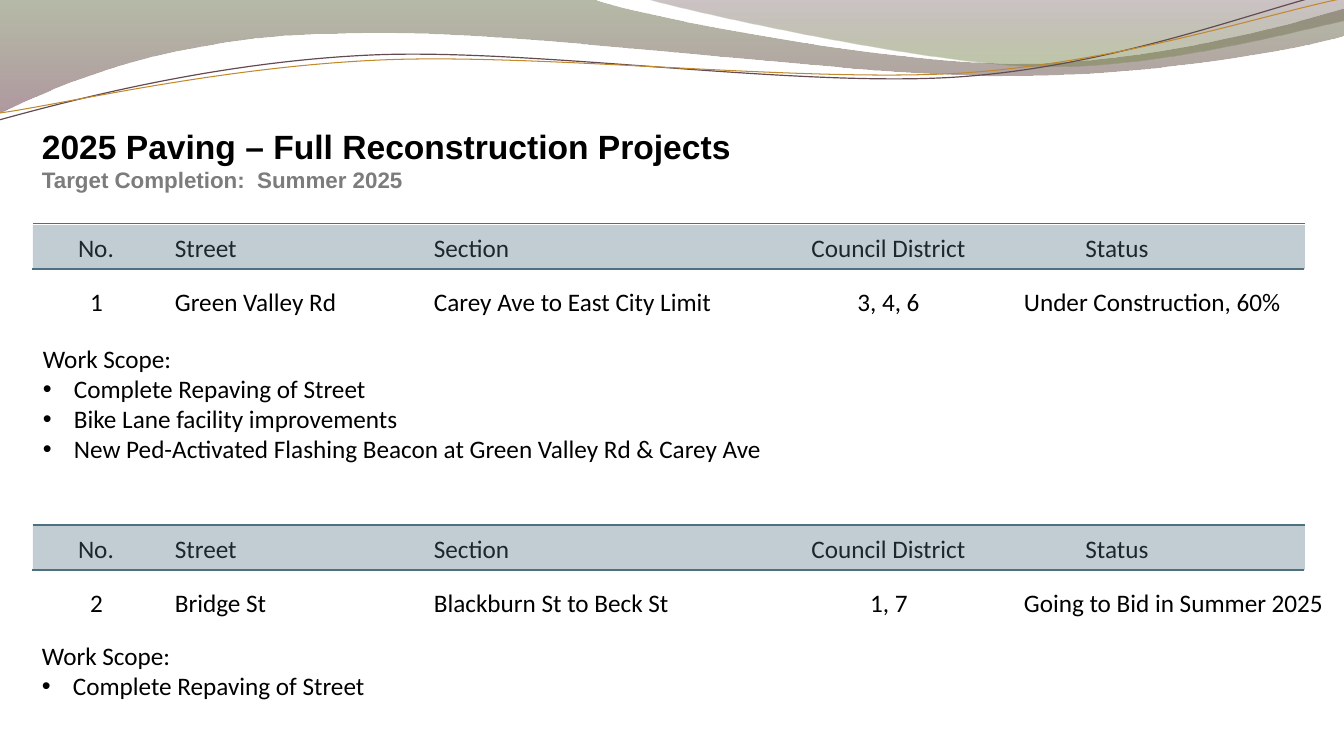
import pptx
import pptx.util
import pptx.dml.color
import pptx.enum.shapes
import pptx.enum.text
import pptx.oxml.ns
import lxml.etree

RGB = pptx.dml.color.RGBColor
ALIGN = pptx.enum.text.PP_ALIGN
SCALE = 914400 / 100.8

BLACK = RGB(0x00, 0x00, 0x00)
GRAY = RGB(0x7C, 0x7C, 0x7C)
RULE = RGB(0x4D, 0x70, 0x7F)
BAND = RGB(0x50, 0x72, 0x81)
MOSS = RGB(0x5E, 0x66, 0x3D)
MAUVE = RGB(0x6E, 0x44, 0x50)
WINE = RGB(0x56, 0x3A, 0x41)
OLIVE = RGB(0x73, 0x80, 0x45)
PLUM = RGB(0x64, 0x4A, 0x51)
GOLD = RGB(0xC1, 0x88, 0x2C)

# Paths: two numbers make a straight step, six make a curve
WAVES = [
    ([(0, -1), (592, -1), (639, 17, 892, 64, 1019, 64),
      (1147, 64, 1288, 26, 1344, 9), (1346, 36),
      (1321, 44, 1169, 77, 1002, 76), (836, 76, 513, 28, 346, 34),
      (173, 35, 61, 84, -1, 114)],
     [(0, MOSS, 45), (1, MAUVE, 55)]),
    ([(644, -1), (684, 11, 916, 62, 1033, 66),
      (1150, 70, 1292, 32, 1344, 21), (1344, 0)],
     [(0, WINE, 30), (0.8, OLIVE, 45)]),
]
CURVES = [
    ([(-1, 120), (65, 102, 213, 62, 372, 55), (531, 48, 796, 88, 958, 77),
      (1119, 66, 1262, 8, 1342, -10)], PLUM, 0.85),
    ([(0, 113), (64, 104, 220, 67, 381, 60), (541, 53, 802, 83, 963, 73),
      (1124, 62, 1265, 14, 1345, -2)], GOLD, 0.75),
]

# Each cell: text, left, width, alignment
HEADS = [("No.", 68, 56, ALIGN.CENTER), ("Street", 165, 83, ALIGN.LEFT),
         ("Section", 424, 96, ALIGN.LEFT),
         ("Council District", 801, 175, ALIGN.CENTER),
         ("Status", 1075, 84, ALIGN.CENTER)]
PARTS = [
    (224, [("1", 80, 33, ALIGN.CENTER),
           ("Green Valley Rd", 165, 183, ALIGN.LEFT),
           ("Carey Ave to East City Limit", 424, 298, ALIGN.LEFT),
           ("3, 4, 6", 847, 83, ALIGN.CENTER),
           ("Under Construction, 60%", 1014, 278, ALIGN.LEFT)],
     (33, 338, 743, 163),
     ["Complete Repaving of Street", "Bike Lane facility improvements",
      "New Ped-Activated Flashing Beacon at Green Valley Rd & Carey Ave"]),
    (525, [("2", 80, 33, ALIGN.CENTER),
           ("Bridge St", 165, 112, ALIGN.LEFT),
           ("Blackburn St to Beck St", 424, 255, ALIGN.LEFT),
           ("1, 7", 860, 58, ALIGN.CENTER),
           ("Going to Bid in Summer 2025", 1014, 320, ALIGN.LEFT)],
     (32, 635, 346, 72),
     ["Complete Repaving of Street"]),
]


def px(n):
    return round(n * SCALE)


def fade(color, alpha):
    """Add opacity, in percent, to each colour inside an element."""
    for node in color.iter(pptx.oxml.ns.qn("a:srgbClr")):
        tag = lxml.etree.SubElement(node, pptx.oxml.ns.qn("a:alpha"))
        tag.set("val", str(alpha * 1000))


def bend(shape, steps):
    """Join the three points of each curved step into one Bezier."""
    lines = list(shape._element.iter(pptx.oxml.ns.qn("a:lnTo")))
    for step in steps:
        count = len(step) // 2
        group, lines = lines[:count], lines[count:]
        if count == 3:
            arc = lxml.etree.Element(pptx.oxml.ns.qn("a:cubicBezTo"))
            group[0].addprevious(arc)
            for line in group:
                arc.append(line[0])
                line.getparent().remove(line)


def outline(slide, path, close):
    spots = [(px(step[i]), px(step[i + 1]))
             for step in path for i in range(0, len(step), 2)]
    pen = slide.shapes.build_freeform(*spots[0])
    pen.add_line_segments(spots[1:], close=close)
    shape = pen.convert_to_shape()
    shape.shadow.inherit = False
    bend(shape, path[1:])
    return shape


def wave(slide, path, stops):
    shape = outline(slide, path, True)
    shape.line.fill.background()
    shape.fill.gradient()
    shape.fill.gradient_angle = 270
    nodes = shape._element.spPr.iter(pptx.oxml.ns.qn("a:gs"))
    for stop, node, (pos, color, alpha) in zip(
            shape.fill.gradient_stops, list(nodes), stops):
        stop.position = pos
        stop.color.rgb = color
        fade(node, alpha)


def curve(slide, path, color, width):
    shape = outline(slide, path, False)
    shape.fill.background()
    shape.line.color.rgb = color
    shape.line.width = pptx.util.Pt(width)


def rule(slide, left, top):
    line = slide.shapes.add_connector(
        pptx.enum.shapes.MSO_CONNECTOR.STRAIGHT,
        px(left), px(top), px(left + 1272), px(top))
    line.line.color.rgb = RULE
    line.line.width = pptx.util.Pt(0.75)
    lxml.etree.SubElement(line._element.spPr, pptx.oxml.ns.qn("a:effectLst"))


def band(slide, top):
    shape = slide.shapes.add_shape(
        pptx.enum.shapes.MSO_SHAPE.RECTANGLE,
        px(33), px(top), px(1272), px(44))
    shape.shadow.inherit = False
    shape.line.fill.background()
    shape.fill.solid()
    shape.fill.fore_color.rgb = BAND
    fade(shape._element.spPr, 35)


def box(slide, left, top, width, height):
    frame = slide.shapes.add_textbox(
        px(left), px(top), px(width), px(height)).text_frame
    frame.word_wrap = False
    frame.auto_size = pptx.enum.text.MSO_AUTO_SIZE.SHAPE_TO_FIT_TEXT
    return frame


def write(frame, text, size=18, font="Calibri", color=BLACK, bold=False,
          align=ALIGN.LEFT, bullet=False):
    para = frame.add_paragraph() if frame.text else frame.paragraphs[0]
    para.alignment = align
    run = para.add_run()
    run.text = text
    run.font.size = pptx.util.Pt(size)
    run.font.name = font
    run.font.bold = bold
    run.font.color.rgb = color
    if bullet:
        props = para._p.get_or_add_pPr()
        props.set("marL", str(px(31)))
        props.set("indent", str(px(-31)))
        face = lxml.etree.SubElement(props, pptx.oxml.ns.qn("a:buFont"))
        face.set("typeface", "Arial")
        mark = lxml.etree.SubElement(props, pptx.oxml.ns.qn("a:buChar"))
        mark.set("char", "•")


def row(slide, cells, top):
    for text, left, width, align in cells:
        write(box(slide, left, top, width, 40), text, align=align)


def part(slide, top, cells, area, scope):
    row(slide, HEADS, top + 3)
    row(slide, cells, top + 57)
    rule(slide, 32, top + 45)
    rule(slide, 33, top)
    band(slide, top + 1)
    frame = box(slide, *area)
    write(frame, "Work Scope:")
    for item in scope:
        write(frame, item, bullet=True)


def main():
    deck = pptx.Presentation()
    deck.slide_width = px(1344)
    deck.slide_height = px(756)
    slide = deck.slides.add_slide(deck.slide_layouts[6])

    # Header waves
    for path, stops in WAVES:
        wave(slide, path, stops)
    for path, color, width in CURVES:
        curve(slide, path, color, width)

    # Title
    title = box(slide, 32, 121, 738, 78)
    write(title, "2025 Paving – Full Reconstruction Projects",
          size=24, font="Arial", bold=True)
    write(title, "Target Completion:  Summer 2025",
          size=16, font="Arial", color=GRAY, bold=True)

    # Projects
    for top, cells, area, scope in PARTS:
        part(slide, top, cells, area, scope)

    deck.save("out.pptx")


if __name__ == "__main__":
    main()
